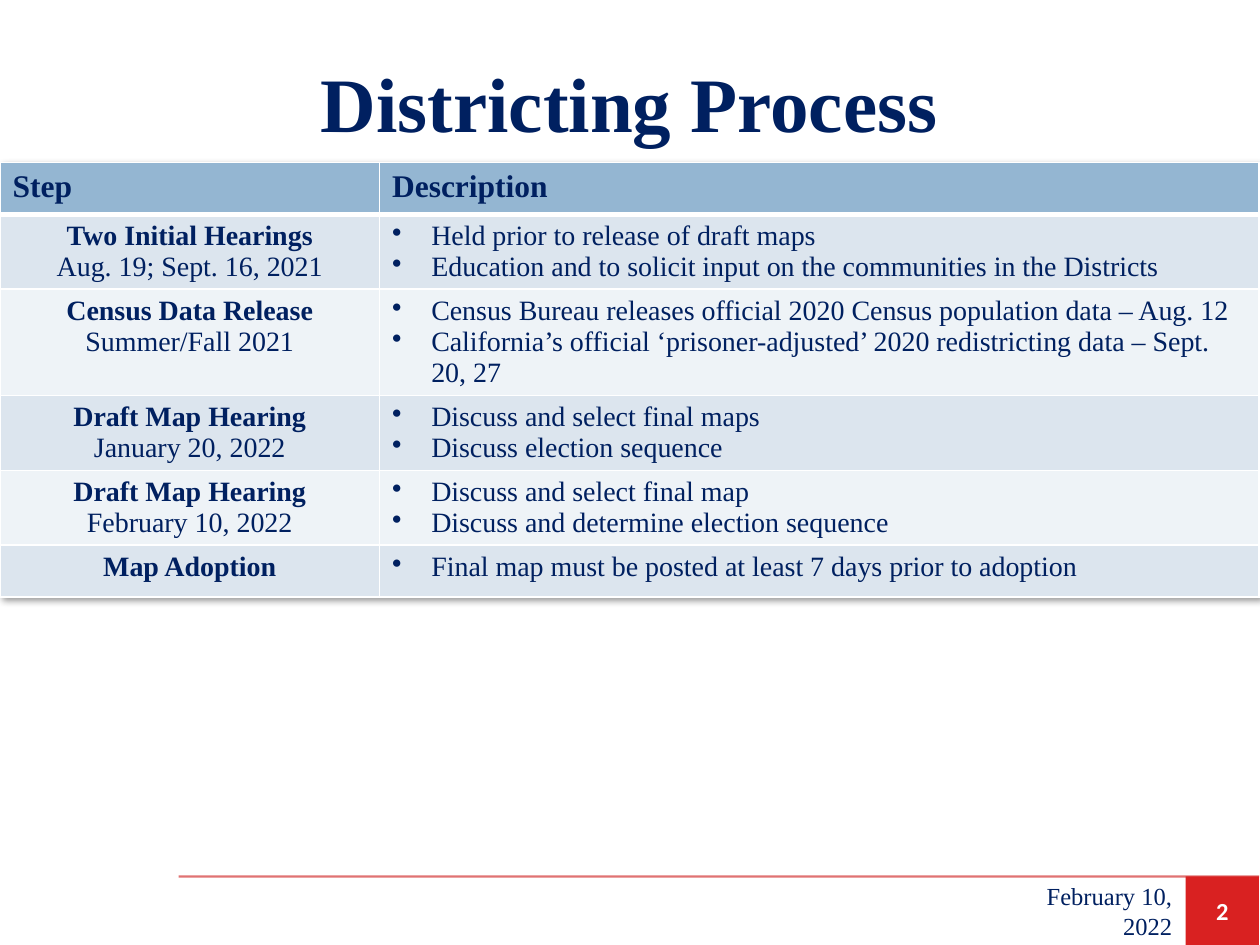
import pptx
import pptx.util
import pptx.dml.color
import pptx.enum.shapes
import pptx.enum.text
import pptx.oxml
import pptx.oxml.ns
import lxml.etree

Cm = pptx.util.Cm
Pt = pptx.util.Pt
Align = pptx.enum.text.PP_ALIGN
Middle = pptx.enum.text.MSO_ANCHOR.MIDDLE
qn = pptx.oxml.ns.qn
space = pptx.oxml.ns.nsdecls("a")
serif = "Times New Roman"
hues = {"navy": "002060", "red": "D92121", "rule": "C80000", "white": "FFFFFF",
        "head": "94B6D2", "dark": "DCE5EE", "light": "EEF3F7"}


def shade(name):
    return pptx.dml.color.RGBColor.from_string(hues[name])


def write(par, text, size, bold=False, hue="navy", face=serif, align=Align.LEFT):
    par.alignment = align
    run = par.add_run()
    run.text = text
    run.font.size = Pt(size)
    run.font.bold = bold
    run.font.name = face
    run.font.color.rgb = shade(hue)


deck = pptx.Presentation()
deck.slide_width = Cm(25.4)
deck.slide_height = Cm(19.05)
slide = deck.slides.add_slide(deck.slide_layouts[5])
shapes = slide.shapes

rule = shapes.add_connector(pptx.enum.shapes.MSO_CONNECTOR.STRAIGHT,
                            Cm(3.6), Cm(17.67), Cm(25.38), Cm(17.67))
rule.line.width = Pt(1.25)
rule.line.color.rgb = shade("rule")
tint = rule.line._ln.find(".//" + qn("a:srgbClr"))
lxml.etree.SubElement(tint, qn("a:alpha"), val="55000")
lxml.etree.SubElement(rule._element.spPr, qn("a:effectLst"))

title = shapes.title
title.left, title.top, title.width, title.height = Cm(0.94), Cm(0.69), Cm(23.5), Cm(2.74)
title.text_frame.vertical_anchor = Middle
write(title.text_frame.paragraphs[0], "Districting Process", 44, True, align=Align.CENTER)

badge = shapes.add_shape(pptx.enum.shapes.MSO_SHAPE.RECTANGLE,
                         Cm(23.9), Cm(17.67), Cm(1.48), Cm(1.38))
badge.shadow.inherit = False
badge.fill.solid()
badge.fill.fore_color.rgb = shade("red")
badge.line.fill.background()
badge.text_frame.vertical_anchor = Middle
write(badge.text_frame.paragraphs[0], "2", 14, True, "white", "Calibri", Align.CENTER)

steps = [
    ("Two Initial Hearings", "Aug. 19; Sept. 16, 2021", 1.51, [
        "Held prior to release of draft maps",
        "Education and to solicit input on the communities in the Districts"]),
    ("Census Data Release", "Summer/Fall 2021", 2.14, [
        "Census Bureau releases official 2020 Census population data – Aug. 12",
        "California’s official ‘prisoner-adjusted’ 2020 redistricting data – Sept. 20, 27"]),
    ("Draft Map Hearing", "January 20, 2022", 1.51, [
        "Discuss and select final maps",
        "Discuss election sequence"]),
    ("Draft Map Hearing", "February 10, 2022", 1.51, [
        "Discuss and select final map",
        "Discuss and determine election sequence"]),
    ("Map Adoption", None, 1.04, [
        "Final map must be posted at least 7 days prior to adoption"]),
]
high = [1.04] + [step[2] for step in steps]
frame = shapes.add_table(len(high), 2, Cm(0), Cm(3.28), Cm(25.38), Cm(sum(high)))
table = frame.table
table.columns[0].width = Cm(7.65)
table.columns[1].width = Cm(17.73)
table._tbl.tblPr.insert(0, pptx.oxml.parse_xml(
    f'<a:effectLst {space}><a:outerShdw blurRad="50800" dist="38100" dir="2700000" '
    'algn="tl" rotWithShape="0"><a:srgbClr val="000000"><a:alpha val="40000"/>'
    '</a:srgbClr></a:outerShdw></a:effectLst>'))

for cell, text in zip(table.rows[0].cells, ("Step", "Description")):
    write(cell.text_frame.paragraphs[0], text, 18, True)

for row, (name, date, _, notes) in enumerate(steps, 1):
    left, right = table.rows[row].cells
    write(left.text_frame.paragraphs[0], name, 16, True, align=Align.CENTER)
    if date:
        write(left.text_frame.add_paragraph(), date, 16, align=Align.CENTER)
    body = right.text_frame
    for spot, note in enumerate(notes):
        par = body.add_paragraph() if spot else body.paragraphs[0]
        props = par._p.get_or_add_pPr()
        props.set("marL", str(Cm(0.79)))
        props.set("indent", str(Cm(-0.79)))
        lxml.etree.SubElement(props, qn("a:buChar"), char="•")
        write(par, note, 16)

for row, size in enumerate(high):
    table.rows[row].height = Cm(size)
    for cell in table.rows[row].cells:
        cell.fill.solid()
        cell.fill.fore_color.rgb = shade("head" if row == 0 else "dark" if row % 2 else "light")
        for spot, side in enumerate("LRTB"):
            thick = 3 if (row, side) in ((0, "B"), (1, "T")) else 1
            cell._tc.tcPr.insert(spot, pptx.oxml.parse_xml(
                f'<a:ln{side} {space} w="{Pt(thick)}"><a:solidFill>'
                f'<a:srgbClr val="{hues["white"]}"/></a:solidFill></a:ln{side}>'))

stamp = shapes.add_textbox(Cm(19.89), Cm(17.67), Cm(3.99), Cm(1.38)).text_frame
stamp.word_wrap = True
stamp.vertical_anchor = Middle
write(stamp.paragraphs[0], "February 10, 2022", 14, align=Align.RIGHT)

deck.save("out.pptx")
